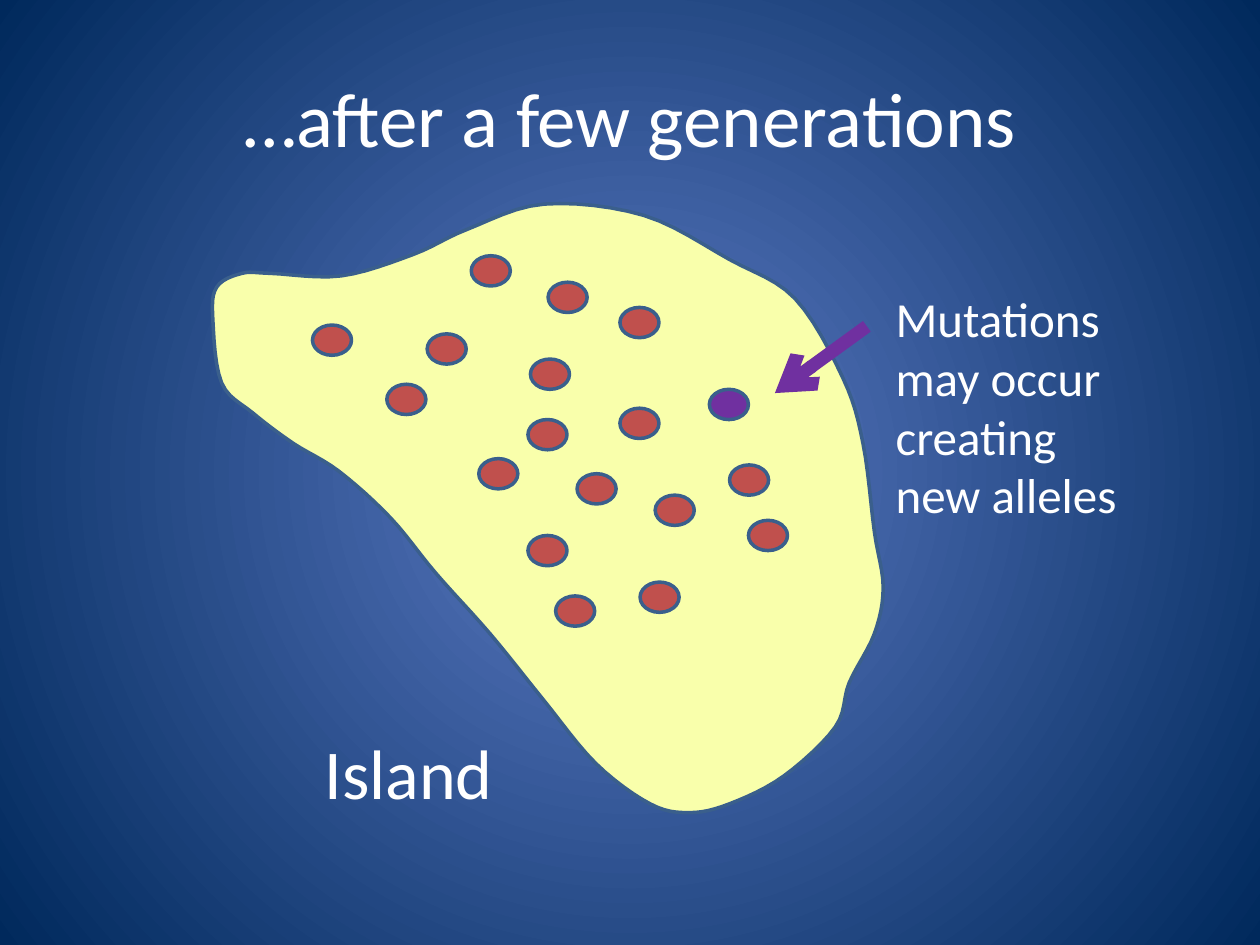
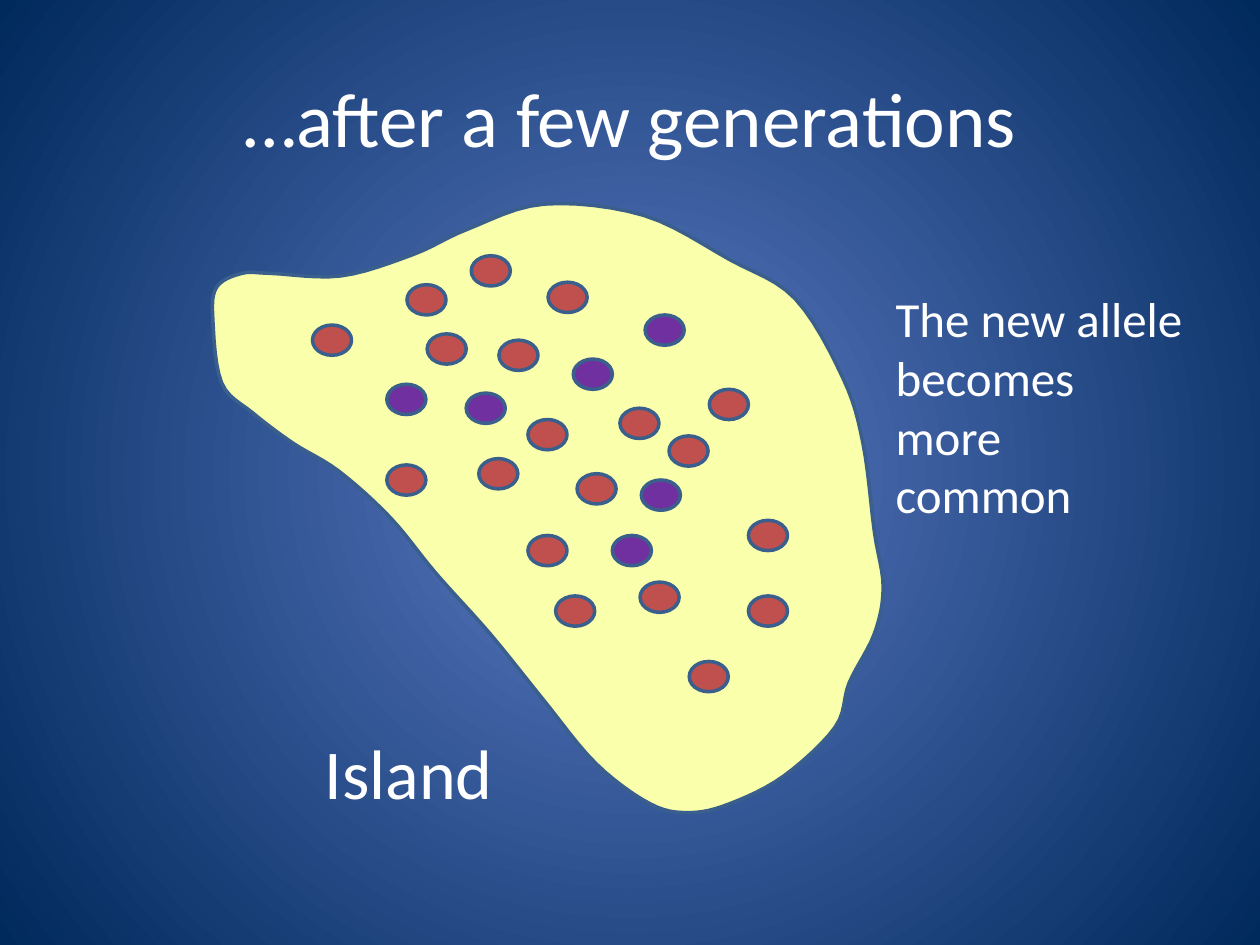
from dataclasses import dataclass

import lxml.etree
import pptx
import pptx.dml.color
import pptx.enum.shapes
import pptx.enum.text
import pptx.oxml.ns
import pptx.util

COLS, ROWS = 100, 75
CELL = pptx.util.Inches(10) // COLS
FONT = "Calibri"
COLORS = {
    "glow": "5E7CC5",
    "night": "00295C",
    "sand": "F9FFAB",
    "outline": "3A5F8C",
    "allele": "C0504D",
    "mutant": "7030A0",
    "text": "FFFFFF",
}
ALIGN = pptx.enum.text.PP_ALIGN
ANCHOR = pptx.enum.text.MSO_ANCHOR
Point = tuple[float, float]


@dataclass(frozen=True)
class Box:
    x: float
    y: float
    w: float
    h: float

    def emu(self) -> list[int]:
        return [cells(v) for v in (self.x, self.y, self.w, self.h)]


@dataclass(frozen=True)
class Generation:
    caption: str
    caption_width: float
    alleles: list[Point]
    mutants: list[Point]
    arrow: tuple[Point, Point] | None = None
    grouped: bool = False


DOT_W, DOT_H = 3.1, 2.4
TITLE_BOX = Box(5, 3, 90, 12.5)
LABEL_BOX = Box(24.8, 57.4, 24.4, 7.7)
CAPTION_X, CAPTION_Y, CAPTION_H = 70.1, 22.4, 19.9

NORTH_SHORE = [(17.2, 22.8), (19.2, 21.7), (21.5, 21.7), (27.1, 21.9), (32.8, 20.2),
               (37.1, 18.2), (43.2, 16.2), (51.1, 17.1), (57.9, 20.6)]
EAST_SHORE = [(63.1, 23.7), (66.9, 30), (68.5, 35.2), (69.4, 42.2), (70.1, 46.6),
              (69.4, 50.3), (67.4, 54.2), (66.3, 57.7)]
SOUTH_SHORE = [(62.2, 61.6), (57.9, 63.8), (54.7, 64.5), (51.6, 63.8), (47.3, 60.6),
               (43.1, 55.5)]
WEST_SHORE = [(38.9, 50.3), (34.6, 45.5), (31, 41.1), (26.9, 37.4), (23.3, 35.2),
              (20.1, 32.8), (17.6, 30.4), (16.9, 25.4)]
SHORELINE = NORTH_SHORE + EAST_SHORE + SOUTH_SHORE + WEST_SHORE
STEPS_PER_STRETCH = 6

LASTING_ALLELES = [
    (43.5, 22.4), (33.9, 26.5), (41.9, 33.3), (59.4, 41.3), (38, 36.4), (41.9, 42.5),
    (50.8, 46.2), (24.8, 25.8), (37.4, 20.3), (45.8, 37.6), (49.2, 32.4), (44.1, 47.3),
]
EARLY_ALLELES = [(49.2, 24.4), (57.9, 36.9), (42.1, 28.5), (52, 39.3)]
LATE_ALLELES = [(32.3, 22.6), (39.6, 27), (53.1, 34.6), (30.7, 36.9), (59.4, 47.3),
                (54.7, 52.5)]
LATE_MUTANTS = [(37, 31.2), (45.5, 28.5), (51.2, 25), (50.9, 38.1), (48.6, 42.5)]
EAST_SPOT = (56.3, 30.9)
WEST_SPOT = (30.7, 30.5)

GENERATIONS = [
    Generation(
        caption="Mutations may occur creating new alleles",
        caption_width=20.8,
        alleles=[*LASTING_ALLELES, *EARLY_ALLELES, WEST_SPOT],
        mutants=[EAST_SPOT],
        arrow=((68.8, 25.9), (61.5, 31.2)),
    ),
    Generation(
        caption="The new allele becomes more common",
        caption_width=24.8,
        alleles=[*LASTING_ALLELES, *LATE_ALLELES, EAST_SPOT],
        mutants=[*LATE_MUTANTS, WEST_SPOT],
        grouped=True,
    ),
]


def cells(n: float) -> int:
    return round(n * CELL)


def rgb(name: str) -> pptx.dml.color.RGBColor:
    return pptx.dml.color.RGBColor.from_string(COLORS[name])


def add_child(parent, tag: str, **attrs: str):
    return lxml.etree.SubElement(parent, pptx.oxml.ns.qn(tag), **attrs)


def catmull_rom(a: float, b: float, c: float, d: float, t: float) -> float:
    slope = c - a
    bend = 2 * a - 5 * b + 4 * c - d
    twist = 3 * (b - c) + d - a
    return b + (slope * t + bend * t ** 2 + twist * t ** 3) / 2


def smooth_loop(anchors: list[Point], steps: int) -> list[Point]:
    curve = []
    count = len(anchors)
    for i in range(count):
        xs, ys = zip(*(anchors[(i + k) % count] for k in (-1, 0, 1, 2)))
        for step in range(steps):
            t = step / steps
            curve.append((catmull_rom(*xs, t), catmull_rom(*ys, t)))
    return curve


def paint_background(slide) -> None:
    fill = slide.background.fill
    fill.gradient()
    for stop, name, position in zip(fill.gradient_stops, ("glow", "night"), (0, 1)):
        stop.color.rgb = rgb(name)
        stop.position = position
    grad = slide.background._cSld.find(".//" + pptx.oxml.ns.qn("a:gradFill"))
    grad.remove(grad.find(pptx.oxml.ns.qn("a:lin")))
    circle = add_child(grad, "a:path", path="circle")
    add_child(circle, "a:fillToRect", **dict.fromkeys("ltrb", "50000"))


def add_text(slide, text: str, box: Box, *, size: float,
             align=ALIGN.LEFT, anchor=ANCHOR.TOP) -> None:
    tf = slide.shapes.add_textbox(*box.emu()).text_frame
    tf.word_wrap = True
    tf.vertical_anchor = anchor
    p = tf.paragraphs[0]
    p.alignment = align
    r = p.add_run()
    r.text = text
    r.font.name = FONT
    r.font.size = pptx.util.Pt(size)
    r.font.color.rgb = rgb("text")


def style(sp, fill: str) -> None:
    sp.shadow.inherit = False
    sp.fill.solid()
    sp.fill.fore_color.rgb = rgb(fill)
    sp.line.color.rgb = rgb("outline")
    sp.line.width = pptx.util.Pt(2)


def add_island(shapes) -> None:
    coast = smooth_loop(SHORELINE, STEPS_PER_STRETCH)
    start, *rest = [(cells(x), cells(y)) for x, y in coast]
    builder = shapes.build_freeform(*start)
    builder.add_line_segments(rest, close=True)
    style(builder.convert_to_shape(), "sand")


def add_dots(shapes, spots: list[Point], fill: str) -> None:
    oval = pptx.enum.shapes.MSO_SHAPE.OVAL
    for x, y in spots:
        style(shapes.add_shape(oval, *Box(x, y, DOT_W, DOT_H).emu()), fill)


def add_arrow(slide, start: Point, end: Point) -> None:
    straight = pptx.enum.shapes.MSO_CONNECTOR.STRAIGHT
    sp = slide.shapes.add_connector(straight, *[cells(v) for v in start + end])
    sp.line.color.rgb = rgb("mutant")
    sp.line.width = pptx.util.Pt(7.5)
    add_child(sp.line._get_or_add_ln(), "a:tailEnd", type="arrow")
    add_child(sp._element.spPr, "a:effectLst")


def add_generation(prs, gen: Generation) -> None:
    slide = prs.slides.add_slide(prs.slide_layouts[6])
    paint_background(slide)
    add_text(slide, "…after a few generations", TITLE_BOX, size=44,
             align=ALIGN.CENTER, anchor=ANCHOR.MIDDLE)
    add_text(slide, "Island", LABEL_BOX, size=40)
    shapes = slide.shapes.add_group_shape().shapes if gen.grouped else slide.shapes
    add_island(shapes)
    add_dots(shapes, gen.alleles, "allele")
    add_dots(shapes, gen.mutants, "mutant")
    caption_box = Box(CAPTION_X, CAPTION_Y, gen.caption_width, CAPTION_H)
    add_text(slide, gen.caption, caption_box, size=28)
    if gen.arrow:
        add_arrow(slide, *gen.arrow)


def main() -> None:
    prs = pptx.Presentation()
    prs.slide_width = cells(COLS)
    prs.slide_height = cells(ROWS)
    for gen in GENERATIONS:
        add_generation(prs, gen)
    prs.save("out.pptx")


if __name__ == "__main__":
    main()
